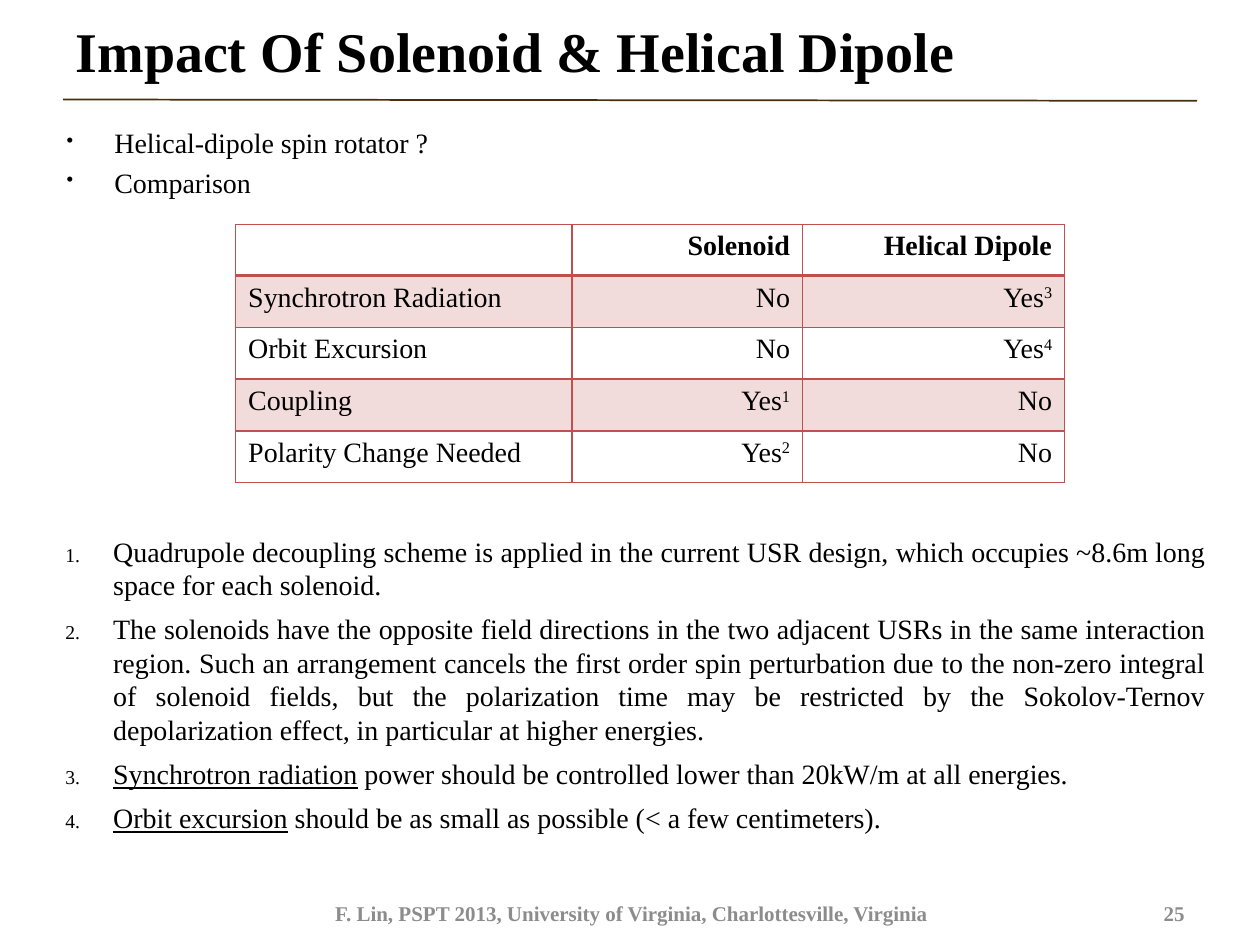
from dataclasses import dataclass

from lxml.etree import SubElement
from pptx import Presentation
from pptx.dml.color import RGBColor
from pptx.enum.shapes import MSO_CONNECTOR
from pptx.enum.text import MSO_ANCHOR, PP_ALIGN
from pptx.oxml.ns import qn
from pptx.util import Inches, Pt


@dataclass(frozen=True)
class Theme:
    font: str = "Times New Roman"
    ink: str = "000000"
    muted: str = "8C8C8C"
    rule: str = "482F0B"
    accent: str = "C0504D"
    title_size: int = 32
    body_size: int = 16
    footer_size: int = 12


THEME = Theme()

TOPICS = ["Helical-dipole spin rotator ?", "Comparison"]

# A cell is its text and an optional superscript note number.
COMPARISON = [
    [("", ""), ("Solenoid", ""), ("Helical Dipole", "")],
    [("Synchrotron Radiation", ""), ("No", ""), ("Yes", "3")],
    [("Orbit Excursion", ""), ("No", ""), ("Yes", "4")],
    [("Coupling", ""), ("Yes", "1"), ("No", "")],
    [("Polarity Change Needed", ""), ("Yes", "2"), ("No", "")],
]
COLUMN_WIDTHS = [2.67, 1.83, 2.08]
ROW_HEIGHT = 0.41

# A note is its underlined lead and the rest of its text.
NOTES = [
    ("", "Quadrupole decoupling scheme is applied in the current USR design, "
         "which occupies ~8.6m long space for each solenoid."),
    ("", "The solenoids have the opposite field directions in the two adjacent "
         "USRs in the same interaction region. Such an arrangement cancels the "
         "first order spin perturbation due to the non-zero integral of solenoid "
         "fields, but the polarization time may be restricted by the "
         "Sokolov-Ternov depolarization effect, in particular at higher energies."),
    ("Synchrotron radiation",
     " power should be controlled lower than 20kW/m at all energies."),
    ("Orbit excursion", " should be as small as possible (< a few centimeters)."),
]


def style(para, size, color=THEME.ink, bold=False, align=PP_ALIGN.LEFT):
    para.alignment = align
    font = para.font
    font.name, font.size, font.bold = THEME.font, Pt(size), bold
    font.color.rgb = RGBColor.from_string(color)


def add_span(para, text):
    span = para.add_run()
    span.text = text
    return span


def add_bullet(para, tag, **attributes):
    """Give a paragraph a hanging indent and a small bullet or number."""
    props = para._p.get_or_add_pPr()
    props.set("marL", str(Inches(0.38)))
    props.set("indent", str(-Inches(0.38)))
    SubElement(props, qn("a:buSzPct"), val="70000")
    SubElement(props, qn(tag), **attributes)


def add_box(page, left, top, width, height, anchor=MSO_ANCHOR.TOP):
    box = page.shapes.add_textbox(
        Inches(left), Inches(top), Inches(width), Inches(height))
    frame = box.text_frame
    frame.word_wrap = True
    frame.vertical_anchor = anchor
    return frame


def next_paragraph(frame, index):
    return frame.add_paragraph() if index else frame.paragraphs[0]


def set_title(page, text):
    title = page.shapes.title
    title.left, title.top = Inches(0.5), Inches(0)
    title.width, title.height = Inches(9.1), Inches(0.79)
    frame = title.text_frame
    frame.vertical_anchor = MSO_ANCHOR.MIDDLE
    para = frame.paragraphs[0]
    add_span(para, text)
    style(para, THEME.title_size, bold=True)


def add_title_rule(page):
    rule = page.shapes.add_connector(
        MSO_CONNECTOR.STRAIGHT, Inches(0.5), Inches(0.79), Inches(9.5), Inches(0.8))
    rule.line.color.rgb = RGBColor.from_string(THEME.rule)
    rule.line.width = Pt(1)
    SubElement(rule._element.spPr, qn("a:effectLst"))


def add_topics(page):
    frame = add_box(page, 0.43, 0.95, 5.56, 1.02)
    for index, topic in enumerate(TOPICS):
        para = next_paragraph(frame, index)
        add_span(para, topic)
        add_bullet(para, "a:buChar", char="•")
        if index:
            para.space_before = Pt(3.2)
        style(para, THEME.body_size)


def set_borders(cell, row):
    """Draw all four sides; the line below the header row is thicker."""
    thick_side = {0: "a:lnB", 1: "a:lnT"}.get(row)
    props = cell._tc.get_or_add_tcPr()
    for side in ("a:lnL", "a:lnR", "a:lnT", "a:lnB"):
        width = Pt(2 if side == thick_side else 1)
        line = SubElement(props, qn(side), w=str(width))
        fill = SubElement(line, qn("a:solidFill"))
        SubElement(fill, qn("a:srgbClr"), val=THEME.accent)


def fill_cell(cell, shaded):
    if not shaded:
        cell.fill.background()
        return
    cell.fill.solid()
    cell.fill.fore_color.rgb = RGBColor.from_string(THEME.accent)
    color = cell._tc.tcPr.find(qn("a:solidFill")).find(qn("a:srgbClr"))
    SubElement(color, qn("a:alpha"), val="20000")


def add_comparison(page):
    table = page.shapes.add_table(
        len(COMPARISON), len(COLUMN_WIDTHS), Inches(1.87), Inches(1.78),
        Inches(sum(COLUMN_WIDTHS)), Inches(ROW_HEIGHT * len(COMPARISON))).table
    table.first_row = table.horz_banding = False
    for column, width in zip(table.columns, COLUMN_WIDTHS):
        column.width = Inches(width)
    for row, values in enumerate(COMPARISON):
        table.rows[row].height = Inches(ROW_HEIGHT)
        for column, (text, note) in enumerate(values):
            cell = table.cell(row, column)
            set_borders(cell, row)
            fill_cell(cell, shaded=row % 2 == 1)
            para = cell.text_frame.paragraphs[0]
            if text:
                add_span(para, text)
            if note:
                mark = add_span(para, note)
                mark._r.get_or_add_rPr().set("baseline", "30000")
            style(para, THEME.body_size, bold=row == 0,
                  align=PP_ALIGN.RIGHT if column else PP_ALIGN.LEFT)


def add_notes_list(page):
    frame = add_box(page, 0.42, 4.19, 9.25, 2.51)
    for index, (lead, rest) in enumerate(NOTES):
        para = next_paragraph(frame, index)
        if lead:
            add_span(para, lead).font.underline = True
        add_span(para, rest)
        add_bullet(para, "a:buAutoNum", type="arabicPeriod")
        para.space_after = Pt(6)
        style(para, THEME.body_size, align=PP_ALIGN.JUSTIFY)


def add_footer(page, text, left, width, align):
    frame = add_box(page, left, 7.05, width, 0.4, MSO_ANCHOR.MIDDLE)
    para = frame.paragraphs[0]
    add_span(para, text)
    style(para, THEME.footer_size, THEME.muted, bold=True, align=align)


def main():
    deck = Presentation()
    deck.slide_width, deck.slide_height = Inches(10), Inches(7.5)
    page = deck.slides.add_slide(deck.slide_layouts.get_by_name("Title Only"))
    set_title(page, "Impact Of Solenoid & Helical Dipole")
    add_title_rule(page)
    add_topics(page)
    add_comparison(page)
    add_notes_list(page)
    add_footer(page, "F. Lin, PSPT 2013, University of Virginia, "
               "Charlottesville, Virginia", 2.13, 5.77, PP_ALIGN.CENTER)
    add_footer(page, "25", 8.59, 0.91, PP_ALIGN.RIGHT)
    deck.save("out.pptx")


if __name__ == "__main__":
    main()
